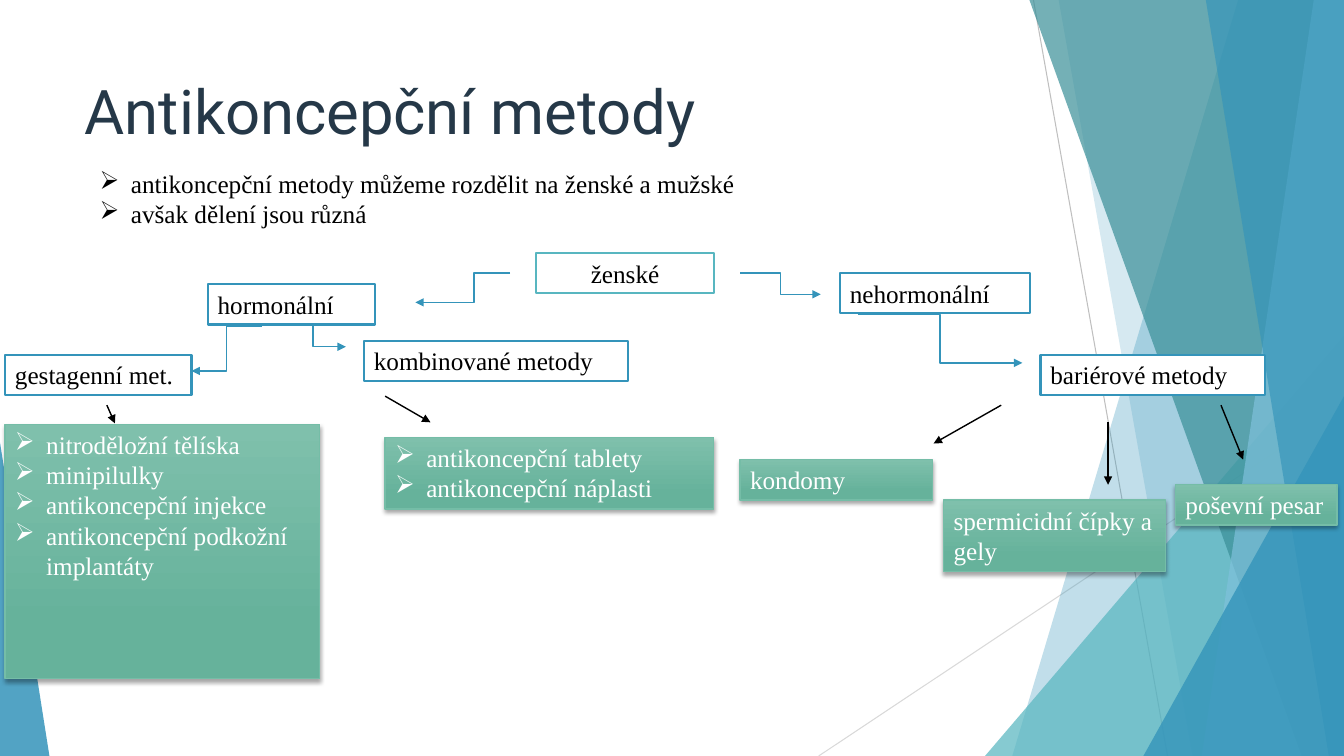
from lxml import etree
from pptx import Presentation
from pptx import util as u
from pptx.dml.color import RGBColor
from pptx.enum import shapes, text
from pptx.oxml.ns import qn


class Theme:
    title_font, body_font = "Roboto", "Times New Roman"
    title_size, body_size = 44, 18
    title, ink, paper = "253848", "000000", "FFFFFF"
    blue, teal, dark_teal, sky = "3494BA", "58B6C0", "3A8F98", "7FC1DB"
    green_top, green_bottom, green_line = "7FC0AC", "66B29B", "75BDA7"
    grey, light_grey = "BFBFBF", "D9D9D9"
    indent = 0.31


def child(parent, tag, **attrs):
    """Append a DrawingML element and return it."""
    el = etree.SubElement(parent, qn(tag))
    for name, value in attrs.items():
        el.set(name, str(value))
    return el


class Deck:
    def __init__(self, theme):
        self.theme = theme
        self.prs = Presentation()
        self.prs.slide_width, self.prs.slide_height = u.Inches(13.33), u.Inches(7.5)
        self.slide = self.prs.slides.add_slide(self.prs.slide_layouts[5])
        self.shapes = self.slide.shapes

    def _font(self, p, name, size, color):
        for r in p.runs:
            r.font.name, r.font.size = name, u.Pt(size)
            r.font.color.rgb = RGBColor.from_string(color)

    def _line(self, sp, color, width):
        sp.line.color.rgb = RGBColor.from_string(color)
        sp.line.width = u.Pt(width)

    def _fill(self, sp, color, opacity=100):
        sp.shadow.inherit = False
        sp.fill.solid()
        sp.fill.fore_color.rgb = RGBColor.from_string(color)
        if opacity < 100:
            rgb = sp._element.spPr.find(qn("a:solidFill"))[0]
            child(rgb, "a:alpha", val=opacity * 1000)

    def _write(self, sp, lines, color, bullets=False, align=text.PP_ALIGN.LEFT):
        tf = sp.text_frame
        tf.word_wrap = True
        tf.vertical_anchor = text.MSO_ANCHOR.TOP
        tf.text = "\n".join(lines)
        for p in tf.paragraphs:
            p.alignment = align
            self._font(p, self.theme.body_font, self.theme.body_size, color)
            if bullets:
                pPr = p._p.get_or_add_pPr()
                pPr.set("marL", str(u.Inches(self.theme.indent)))
                pPr.set("indent", str(u.Inches(-self.theme.indent)))
                child(pPr, "a:buChar", char="➢")

    def title(self, wording, x, y, w, h):
        sp = self.shapes.title
        sp.left, sp.top, sp.width, sp.height = map(u.Inches, (x, y, w, h))
        tf = sp.text_frame
        tf.text = wording
        tf.vertical_anchor = text.MSO_ANCHOR.TOP
        p = tf.paragraphs[0]
        p.alignment = text.PP_ALIGN.LEFT
        self._font(p, self.theme.title_font, self.theme.title_size, self.theme.title)

    def bullets(self, lines, x, y, w, h):
        sp = self.shapes.add_textbox(*map(u.Inches, (x, y, w, h)))
        self._write(sp, lines, self.theme.ink, bullets=True)

    def polygon(self, points, color, opacity):
        pts = [(u.Inches(x), u.Inches(y)) for x, y in points]
        builder = self.shapes.build_freeform(*pts[0])
        builder.add_line_segments(pts[1:], close=True)
        sp = builder.convert_to_shape()
        self._fill(sp, color, opacity)
        sp.line.fill.background()

    def triangle(self, x, y, w, h, apex, color, opacity):
        sp = self.shapes.add_shape(shapes.MSO_SHAPE.ISOSCELES_TRIANGLE,
                                   *map(u.Inches, (x, y, w, h)))
        sp.adjustments[0] = apex
        self._fill(sp, color, opacity)
        sp.line.fill.background()

    def _rect(self, x, y, w, h):
        return self.shapes.add_shape(shapes.MSO_SHAPE.RECTANGLE,
                                     *map(u.Inches, (x, y, w, h)))

    def category(self, label, x, y, w, border=Theme.blue, align=text.PP_ALIGN.LEFT):
        sp = self._rect(x, y, w, 0.4)
        self._fill(sp, self.theme.paper)
        self._line(sp, border, 1.5)
        self._write(sp, [label], self.theme.ink, align=align)

    def method(self, lines, x, y, w, h, bullets=False):
        sp = self._rect(x, y, w, h)
        sp.fill.gradient()
        sp.fill.gradient_angle = 270
        stops = ((0, self.theme.green_top), (0.78, self.theme.green_bottom))
        for stop, (position, color) in zip(sp.fill.gradient_stops, stops):
            stop.position = position
            stop.color.rgb = RGBColor.from_string(color)
        self._line(sp, self.theme.green_line, 1)
        sp.shadow.inherit = False
        shadow = child(sp._element.spPr.find(qn("a:effectLst")), "a:outerShdw",
                       blurRad=u.Pt(3), dist=u.Pt(2), dir=90 * 60000, rotWithShape=0)
        child(child(shadow, "a:srgbClr", val=self.theme.ink), "a:alpha", val=35000)
        self._write(sp, lines, self.theme.paper, bullets)

    def line(self, start, end, color, width=1, arrow=True, bend=None):
        kind = shapes.MSO_CONNECTOR.STRAIGHT if bend is None else shapes.MSO_CONNECTOR.ELBOW
        sp = self.shapes.add_connector(kind, *map(u.Inches, start + end))
        self._line(sp, color, width)
        spPr = sp._element.spPr
        if bend is not None:
            guides = spPr.find(qn("a:prstGeom")).find(qn("a:avLst"))
            child(guides, "a:gd", name="adj1", fmla=f"val {round(bend * 100000)}")
        if arrow:
            child(spPr.find(qn("a:ln")), "a:tailEnd", type="triangle")
        child(spPr, "a:effectLst")


def main():
    t = Theme
    deck = Deck(t)

    # Background facets, from back to front
    right, bottom = 13.33, 7.5

    def facet(top_x, bottom_x, color, opacity):
        deck.polygon([(top_x, 0), (right, 0), (right, bottom), (bottom_x, bottom)],
                     color, opacity)

    deck.line((10.25, 0), (11.58, bottom), t.grey, 0.75, arrow=False)
    deck.line((right, 4.03), (8.12, bottom), t.light_grey, 0.75, arrow=False)
    facet(12.28, 10.04, t.blue, 30)
    facet(10.5, 11.83, t.blue, 20)
    deck.triangle(9.77, 3.33, 3.56, 4.17, 1, t.teal, 72)
    facet(10.21, 12.91, t.dark_teal, 70)
    facet(13.03, 11.92, t.sky, 70)
    facet(11.96, 13.18, t.blue, 65)
    deck.triangle(11.34, 3.93, 1.99, 3.57, 1, t.blue, 80)
    deck.triangle(0, 4.39, 0.49, 3.11, 0, t.blue, 85)

    # Title and introduction
    deck.title("Antikoncepční metody", 0.74, 0.67, 9.4, 1.44)
    deck.bullets(["antikoncepční metody můžeme rozdělit na ženské a mužské",
                  "avšak dělení jsou různá"], 0.89, 1.62, 7.26, 0.71)

    # Categories
    deck.category("ženské", 5.32, 2.51, 1.76, t.teal, text.PP_ALIGN.CENTER)
    for label, x, y, w in [("hormonální", 2.06, 2.82, 1.66),
                           ("nehormonální", 8.33, 2.71, 1.89),
                           ("bariérové metody", 10.32, 3.52, 2.23),
                           ("gestagenní met.", 0.05, 3.52, 1.85),
                           ("kombinované metody", 3.61, 3.38, 2.62)]:
        deck.category(label, x, y, w)

    # Elbow arrows between categories
    for start, end, bend in [((5.06, 2.71), (4.12, 3), 0.38),
                             ((7.34, 2.71), (8.14, 2.92), 0.5),
                             ((8.51, 3.12), (10.14, 3.6), 0.5),
                             ((2.78, 3.22), (3.43, 3.44), 0.5),
                             ((2.6, 3.24), (1.9, 3.68), 0.5)]:
        deck.line(start, end, t.blue, bend=bend)

    # Methods
    deck.method(["kondomy"], 7.34, 4.56, 1.91, 0.4)
    deck.method(["poševní pesar"], 11.66, 4.81, 1.6, 0.4)
    deck.method(["spermicidní čípky a gely"], 9.36, 4.96, 2.2, 0.71)
    deck.method(["nitroděložní tělíska", "minipilulky", "antikoncepční injekce",
                 "antikoncepční podkožní implantáty"], 0.05, 4.21, 3.12, 2.52, bullets=True)
    deck.method(["antikoncepční tablety", "antikoncepční náplasti"],
                3.82, 4.34, 3.26, 0.71, bullets=True)

    # Straight arrows from categories to methods
    for start, end in [((9.93, 4.02), (9.26, 4.4)), ((10.99, 4.19), (10.99, 4.81)),
                       ((12.11, 4.02), (12.33, 4.56)), ((1.06, 4.02), (1.14, 4.2)),
                       ((3.82, 3.93), (4.27, 4.19))]:
        deck.line(start, end, t.ink)

    deck.prs.save("out.pptx")


if __name__ == "__main__":
    main()
